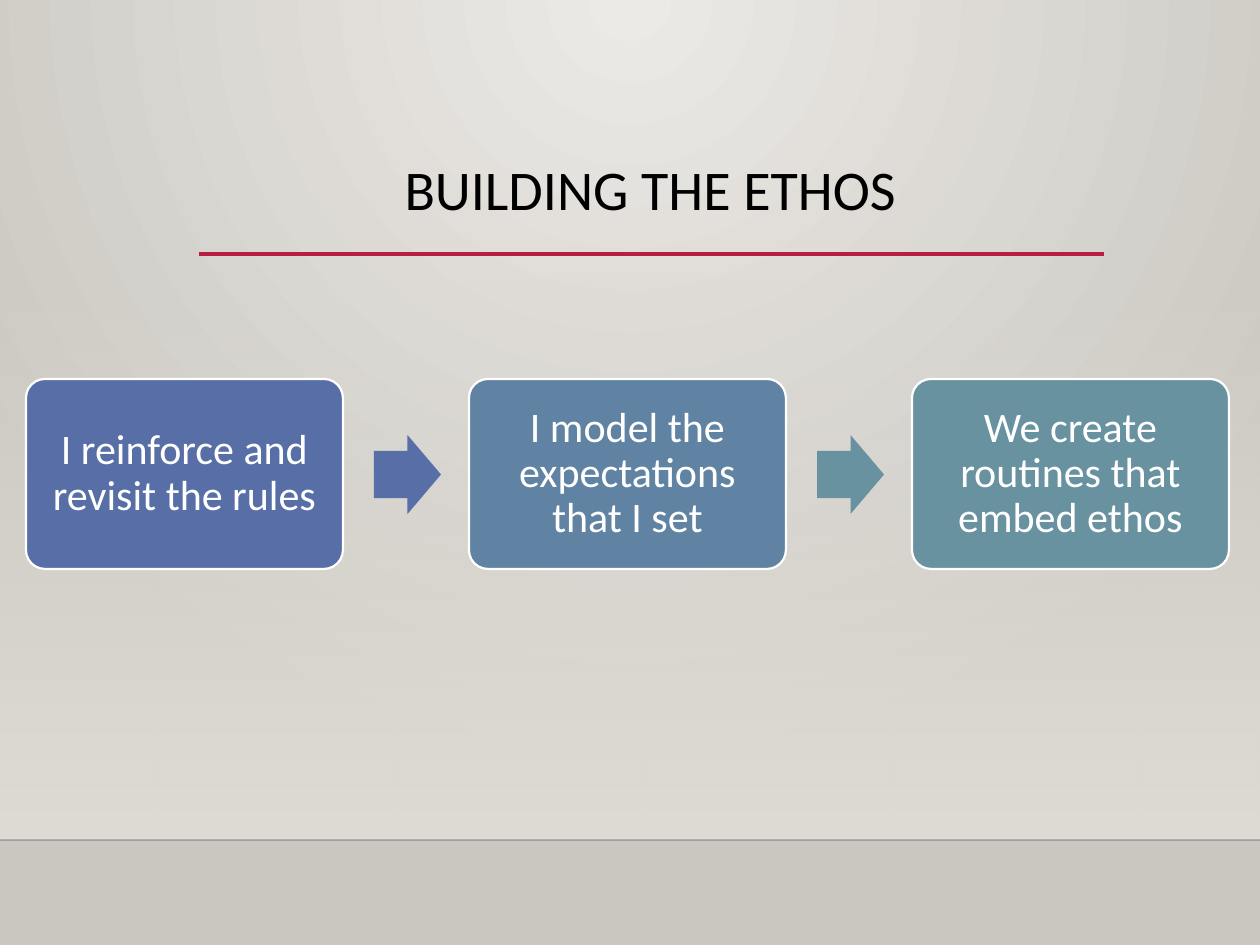
from dataclasses import dataclass

from lxml import etree
from pptx import Presentation
from pptx import util as u
from pptx.dml.color import RGBColor
from pptx.enum import shapes, text
from pptx.oxml import ns, parse_xml

FONT = "Calibri"
PITCH = 443


@dataclass
class Step:
    words: str
    fill: str


@dataclass
class Rule:
    left: int
    right: int
    top: int
    color: str
    points: float
    opacity: int = 100


STEPS = [
    Step("I reinforce and revisit the rules", "586EA6"),
    Step("I model the expectations that I set", "6083A3"),
    Step("We create routines that embed ethos", "6892A0"),
]
ARROW_FILLS = ["586EA6", "6892A0"]
RULES = [
    Rule(0, 1260, 840, "000001", 1, 20),
    Rule(199, 1104, 254, "B71E42", 2.5),
]


def px(length: int) -> int:
    return u.Inches(length / 126)


def rgb(color: str) -> RGBColor:
    return RGBColor.from_string(color)


def gradient(start: str, end: str, direction: str, start_opacity: int = 100):
    return parse_xml(
        f'<a:gradFill {ns.nsdecls("a")} rotWithShape="1"><a:gsLst>'
        f'<a:gs pos="0"><a:srgbClr val="{start}">'
        f'<a:alpha val="{start_opacity * 1000}"/></a:srgbClr></a:gs>'
        f'<a:gs pos="100000"><a:srgbClr val="{end}"/></a:gs>'
        f"</a:gsLst>{direction}</a:gradFill>"
    )


def replace_solid(parent, fill) -> None:
    parent.replace(parent.find(ns.qn("a:solidFill")), fill)


def add_block(page, kind, left: int, top: int, width: int, height: int, fill: str):
    block = page.shapes.add_shape(kind, px(left), px(top), px(width), px(height))
    block.shadow.inherit = False
    block.fill.solid()
    block.fill.fore_color.rgb = rgb(fill)
    block.line.fill.background()
    return block


def paint_backdrop(page) -> None:
    page.background.fill.solid()
    circle = ('<a:path path="circle">'
              '<a:fillToRect l="43000" t="0" r="43000" b="100000"/></a:path>')
    replace_solid(page.element.find(".//" + ns.qn("p:bgPr")),
                  gradient("ECEAE7", "CAC7C1", circle))
    wall = add_block(page, shapes.MSO_SHAPE.RECTANGLE, 0, 277, 1260, 563, "DFDBD5")
    replace_solid(wall.element.spPr,
                  gradient("DFDBD5", "DFDBD5", '<a:lin ang="5400000" scaled="0"/>', 0))


def add_rule(page, rule: Rule) -> None:
    line = page.shapes.add_connector(shapes.MSO_CONNECTOR.STRAIGHT, px(rule.left),
                                     px(rule.top), px(rule.right), px(rule.top))
    line.line.color.rgb = rgb(rule.color)
    line.line.width = u.Pt(rule.points)
    if rule.opacity < 100:
        color = line.element.spPr.find(".//" + ns.qn("a:srgbClr"))
        etree.SubElement(color, ns.qn("a:alpha"), val=str(rule.opacity * 1000))
    etree.SubElement(line.element.spPr, ns.qn("a:effectLst"))


def write(frame, words: str, size: int, color: str) -> None:
    frame.text = words
    frame.word_wrap = True
    frame.auto_size = text.MSO_AUTO_SIZE.NONE
    para = frame.paragraphs[0]
    para.alignment = text.PP_ALIGN.CENTER
    para.line_spacing = 0.9
    para.font.name = FONT
    para.font.size = u.Pt(size)
    para.font.color.rgb = rgb(color)


def set_title(page, words: str) -> None:
    title = page.shapes.title
    title.left, title.top, title.width, title.height = map(px, (115, 156, 1071, 158))
    write(title.text_frame, words, 32, "000000")
    title.text_frame.vertical_anchor = text.MSO_ANCHOR.TOP


def add_step(page, step: Step, left: int) -> None:
    box = add_block(page, shapes.MSO_SHAPE.ROUNDED_RECTANGLE, left, 379, 317, 190, step.fill)
    box.adjustments[0] = 0.1
    box.line.color.rgb = rgb("FFFFFF")
    box.line.width = u.Pt(1.25)
    frame = box.text_frame
    write(frame, step.words, 24, "FFFFFF")
    frame.vertical_anchor = text.MSO_ANCHOR.MIDDLE
    frame.margin_left = frame.margin_right = px(13)
    frame.margin_top = frame.margin_bottom = px(13)


def add_arrow(page, fill: str, left: int) -> None:
    arrow = add_block(page, shapes.MSO_SHAPE.RIGHT_ARROW, left, 435, 67, 79, fill)
    arrow.adjustments[0] = 0.6
    arrow.adjustments[1] = 0.5


def main() -> None:
    deck = Presentation()
    deck.slide_width, deck.slide_height = px(1260), px(945)
    page = deck.slides.add_slide(deck.slide_layouts[5])
    paint_backdrop(page)
    for rule in RULES:
        add_rule(page, rule)
    set_title(page, "BUILDING THE ETHOS")
    for index, step in enumerate(STEPS):
        add_step(page, step, 26 + index * PITCH)
    for index, fill in enumerate(ARROW_FILLS):
        add_arrow(page, fill, 374 + index * PITCH)
    deck.save("out.pptx")


if __name__ == "__main__":
    main()
